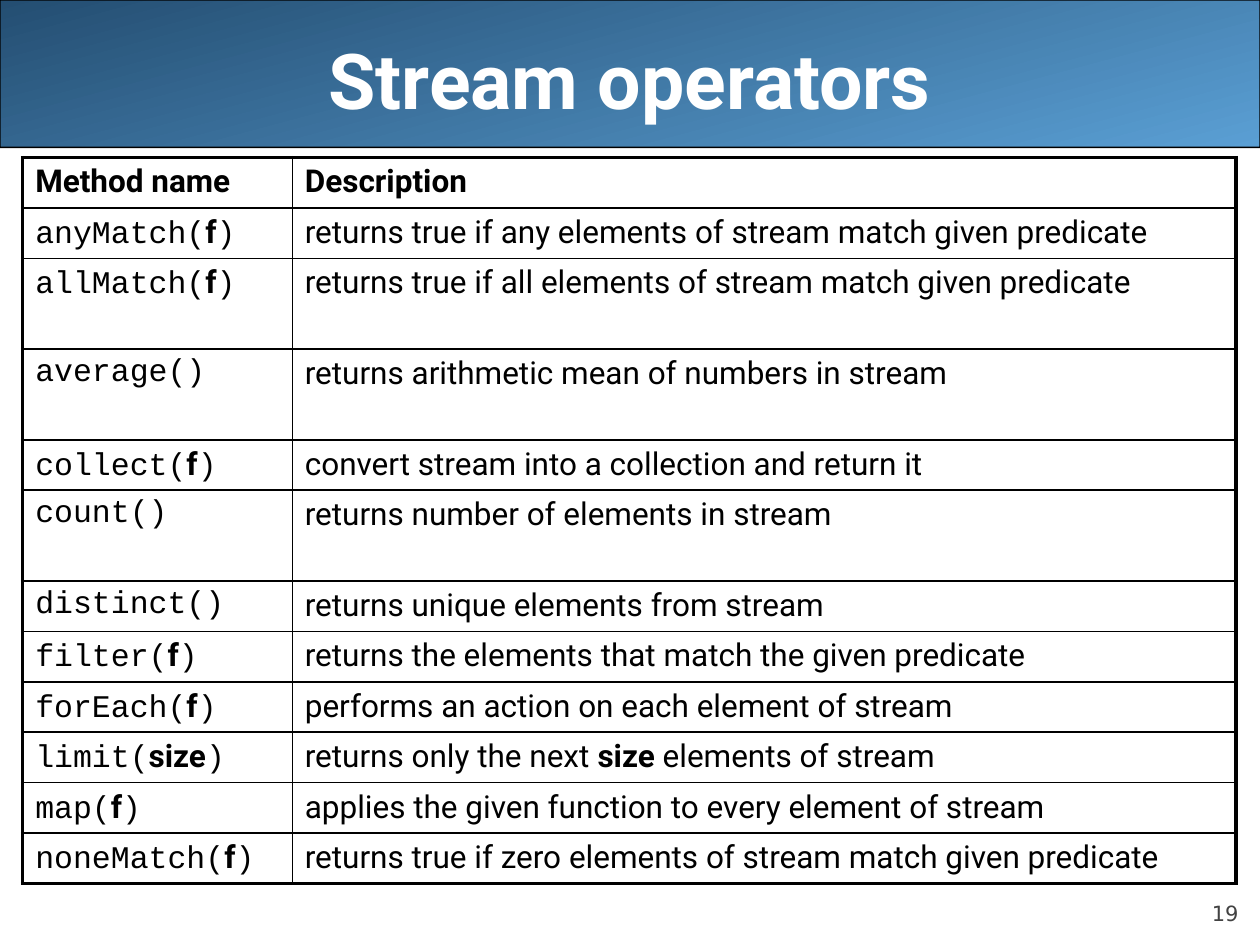
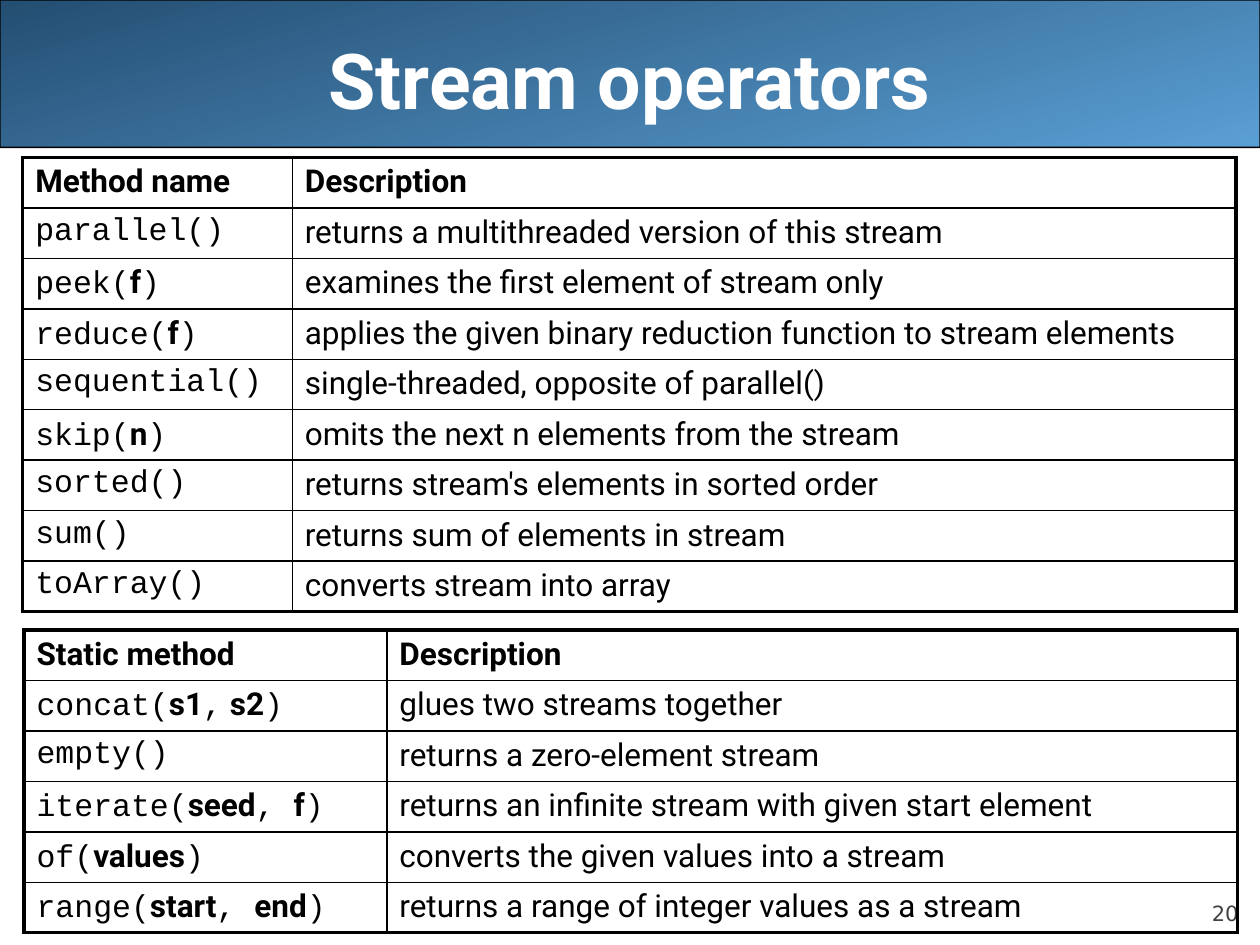
"""Build two slides of reference tables for stream operators."""
from lxml import etree
from pptx import Presentation
from pptx.dml.color import RGBColor
from pptx.enum.shapes import MSO_SHAPE
from pptx.enum.text import MSO_ANCHOR, PP_ALIGN
from pptx.oxml.ns import qn
from pptx.util import Inches, Pt

BAND_SHAPE = MSO_SHAPE.ROUNDED_RECTANGLE
MIDDLE, BOTTOM = MSO_ANCHOR.MIDDLE, MSO_ANCHOR.BOTTOM
CENTER, RIGHT = PP_ALIGN.CENTER, PP_ALIGN.RIGHT

COLORS = {"ink": "000000", "band_dark": "244E72", "band_light": "5A9FD4",
          "title": "FFFFFF", "number": "424242"}
BODY_FONT, CODE_FONT, NUMBER_FONT = "Roboto", "Courier New", "DejaVu Sans"

WIDTH, HEIGHT = 10, 7.5
TABLE_WIDTH = 9.63
ROW, TALL_ROW = 0.4, 0.72
THIN, THICK = 1, 2.25

# Words between asterisks are bold.
MATCHING = [
    ("anyMatch(*f*)", "returns true if any elements of stream match given predicate"),
    ("allMatch(*f*)", "returns true if all elements of stream match given predicate"),
    ("average()", "returns arithmetic mean of numbers in stream"),
    ("collect(*f*)", "convert stream into a collection and return it"),
    ("count()", "returns number of elements in stream"),
    ("distinct()", "returns unique elements from stream"),
    ("filter(*f*)", "returns the elements that match the given predicate"),
    ("forEach(*f*)", "performs an action on each element of stream"),
    ("limit(*size*)", "returns only the next *size* elements of stream"),
    ("map(*f*)", "applies the given function to every element of stream"),
    ("noneMatch(*f*)", "returns true if zero elements of stream match given predicate"),
]
PROCESSING = [
    ("parallel()", "returns a multithreaded version of this stream"),
    ("peek(*f*)", "examines the first element of stream only"),
    ("reduce(*f*)", "applies the given binary reduction function to stream elements"),
    ("sequential()", "single-threaded, opposite of parallel()"),
    ("skip(*n*)", "omits the next n elements from the stream"),
    ("sorted()", "returns stream's elements in sorted order"),
    ("sum()", "returns sum of elements in stream"),
    ("toArray()", "converts stream into array"),
]
STATIC = [
    ("concat(*s1*,* s2*)", "glues two streams together"),
    ("empty()", "returns a zero-element stream"),
    ("iterate(*seed*, *f*)", "returns an infinite stream with given start element"),
    ("of(*values*)", "converts the given values into a stream"),
    ("range(*start*, *end*)", "returns a range of integer values as a stream"),
]
METHOD_TABLE = {"heading": "Method name", "left": 0.18, "top": 1.25, "name_width": 2.14}
STATIC_TABLE = {"heading": "Static method", "left": 0.19, "top": 5, "name_width": 2.88}
SLIDES = [
    {"number": 19, "title": "Stream operators", "tables": [
        {**METHOD_TABLE, "methods": MATCHING,
         "tall": {"allMatch(*f*)", "average()", "count()"}}]},
    {"number": 20, "title": "Stream operators", "tables": [
        {**METHOD_TABLE, "methods": PROCESSING, "tall": set()},
        {**STATIC_TABLE, "methods": STATIC, "tall": set()}]},
]


def color(name):
    return RGBColor.from_string(COLORS[name])


def add_run(paragraph, text, font, size, color_name, bold=False):
    run = paragraph.add_run()
    run.text = text
    run.font.name, run.font.size, run.font.bold = font, Pt(size), bold
    run.font.color.rgb = color(color_name)


def add_label(slide, box, anchor, align):
    frame = slide.shapes.add_textbox(*map(Inches, box)).text_frame
    frame.word_wrap = True
    frame.vertical_anchor = anchor
    frame.paragraphs[0].alignment = align
    return frame


def add_band(slide):
    band = slide.shapes.add_shape(BAND_SHAPE, 0, 0, Inches(WIDTH), Inches(1.17))
    band.adjustments[0] = 0.001
    band.shadow.inherit = False
    band.fill.gradient()
    band.fill.gradient_angle = 360 - 75
    for stop, position, name in zip(band.fill.gradient_stops, (0, 1),
                                    ("band_dark", "band_light")):
        stop.position = position
        stop.color.rgb = color(name)
    band.line.color.rgb = color("ink")
    band.line.width = Pt(0.75)


def add_frame(slide, title, number):
    add_band(slide)
    footer = add_label(slide, (9, 6.95, 0.83, 0.4), BOTTOM, RIGHT)
    footer.margin_left = footer.margin_right = 0
    footer.margin_top = footer.margin_bottom = 0
    footer.paragraphs[0].space_before = Pt(5)
    add_run(footer.paragraphs[0], str(number), NUMBER_FONT, 12, "number")
    heading = add_label(slide, (0.5, 0, 9, 1.25), MIDDLE, CENTER)
    add_run(heading.paragraphs[0], title, BODY_FONT, 44, "title", True)


def set_borders(cell, widths):
    properties = cell._tc.get_or_add_tcPr()
    for index, (side, width) in enumerate(widths.items()):
        line = etree.Element(qn(f"a:ln{side}"), w=str(Pt(width)))
        fill = etree.SubElement(line, qn("a:solidFill"))
        etree.SubElement(fill, qn("a:srgbClr"), val=COLORS["ink"])
        properties.insert(index, line)


def fill_cell(cell, marked_text, font):
    cell.fill.background()
    paragraph = cell.text_frame.paragraphs[0]
    spacing = etree.SubElement(paragraph._p.get_or_add_pPr(), qn("a:spcBef"))
    etree.SubElement(spacing, qn("a:spcPct"), val="20000")
    for index, part in enumerate(marked_text.split("*")):
        bold = index % 2 == 1
        if part:
            add_run(paragraph, part, BODY_FONT if bold else font, 18, "ink", bold)


def add_method_table(slide, spec_table):
    rows = [(f"*{spec_table['heading']}*", "*Description*"), *spec_table["methods"]]
    heights = [TALL_ROW if name in spec_table["tall"] else ROW for name, _ in rows]
    table = slide.shapes.add_table(
        len(rows), 2, Inches(spec_table["left"]), Inches(spec_table["top"]),
        Inches(TABLE_WIDTH), Inches(sum(heights))).table
    table.first_row = table.horz_banding = False
    name_width = spec_table["name_width"]
    for column, width in zip(table.columns, (name_width, TABLE_WIDTH - name_width)):
        column.width = Inches(width)
    last = len(rows) - 1
    for r, (texts, height) in enumerate(zip(rows, heights)):
        table.rows[r].height = Inches(height)
        for c, (text, font) in enumerate(zip(texts, (CODE_FONT, BODY_FONT))):
            fill_cell(table.cell(r, c), text, font)
            outer = {"L": c == 0, "R": c == 1, "T": r == 0, "B": r == last}
            set_borders(table.cell(r, c),
                        {side: THICK if edge else THIN for side, edge in outer.items()})


def main():
    deck = Presentation()
    deck.slide_width, deck.slide_height = Inches(WIDTH), Inches(HEIGHT)
    for content in SLIDES:
        slide = deck.slides.add_slide(deck.slide_layouts[6])
        add_frame(slide, content["title"], content["number"])
        for method_table in content["tables"]:
            add_method_table(slide, method_table)
    deck.save("out.pptx")


if __name__ == "__main__":
    main()
